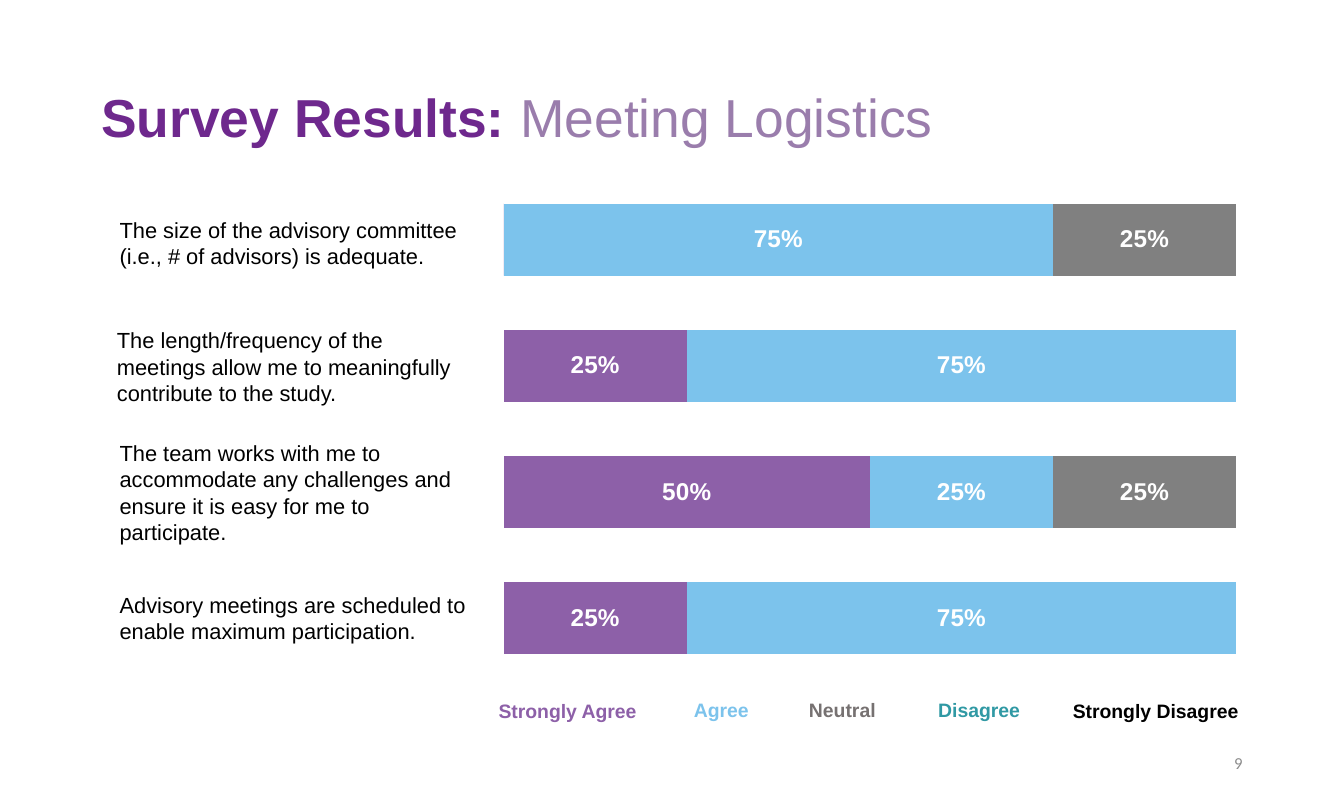
from pptx import Presentation
from pptx.chart.data import CategoryChartData
from pptx.dml.color import RGBColor
from pptx.enum.chart import XL_CHART_TYPE, XL_LABEL_POSITION
from pptx.enum.text import MSO_ANCHOR, MSO_AUTO_SIZE, PP_ALIGN
from pptx.util import Emu, Pt

STACKED = XL_CHART_TYPE.BAR_STACKED
LABEL_CENTER = XL_LABEL_POSITION.CENTER
LEFT, CENTER, RIGHT = PP_ALIGN.LEFT, PP_ALIGN.CENTER, PP_ALIGN.RIGHT
TOP, MIDDLE = MSO_ANCHOR.TOP, MSO_ANCHOR.MIDDLE
GROW, FIXED = MSO_AUTO_SIZE.SHAPE_TO_FIT_TEXT, MSO_AUTO_SIZE.NONE

EMU_PER_PX = 9144  # 100 px to the inch
TITLE_ONLY = 5
COLORS = {
    "title": "6E288D", "subtitle": "9A7DAC", "page_number": "8C8C8C",
    "text": "000000", "white": "FFFFFF",
    "strongly_agree": "8D60A8", "agree": "7CC3EC", "neutral": "808080",
    "neutral_text": "767171", "disagree": "3099A4",
    "gold": "FFC000", "blue": "5B9BD5",
}

# Categories run from the bottom bar to the top bar.
SERIES = [
    ("Series 1", (0.25, 0.5, 0.25, 0), "strongly_agree"),
    ("Series 2", (0.75, 0.25, 0.75, 0.75), "agree"),
    ("Series 3", (0, 0.25, 0, 0.25), "neutral"),
    ("Series 4", (0, 0, 0, 0), "gold"),
    ("Series 5", (0, 0, 0, 0), "blue"),
]
STATEMENTS = [
    (127, 243, 71, "The size of the advisory committee (i.e., # of advisors) is adequate."),
    (124, 369, 101, "The length/frequency of the meetings allow me to meaningfully "
                    "contribute to the study."),
    (127, 498, 131, "The team works with me to accommodate any challenges and "
                    "ensure it is easy for me to participate."),
    (127, 672, 71, "Advisory meetings are scheduled to enable maximum participation."),
]
LEGEND = [
    (559, 795, 181, "Strongly Agree", "strongly_agree"),
    (782, 794, 87, "Agree", "agree"),
    (911, 794, 106, "Neutral", "neutral_text"),
    (1060, 794, 121, "Disagree", "disagree"),
    (1216, 795, 213, "Strongly Disagree", "text"),
]


def px(length):
    return Emu(length * EMU_PER_PX)


def rgb(name):
    return RGBColor.from_string(COLORS[name])


def style_font(font, size, color, bold=False, name="Arial"):
    font.name, font.size, font.bold = name, Pt(size), bold
    font.color.rgb = rgb(color)


def add_span(para, text, **style):
    span = para.add_run()
    span.text = text
    style_font(span.font, **style)


class SurveySlide:
    """Holds the deck, its current page and the font style shared by all text."""

    def __init__(self, width, height):
        self.deck = Presentation()
        self.deck.slide_width, self.deck.slide_height = px(width), px(height)
        self.page = self.deck.slides.add_slide(self.deck.slide_layouts[TITLE_ONLY])

    def title(self, left, top, width, height, spans):
        box = self.page.shapes.title
        box.left, box.top, box.width, box.height = map(px, (left, top, width, height))
        box.text_frame.vertical_anchor = MIDDLE
        para = box.text_frame.paragraphs[0]
        para.alignment, para.line_spacing = LEFT, 0.9
        for text, color, bold in spans:
            add_span(para, text, size=44, color=color, bold=bold)

    def text(self, left, top, width, height, text, align=LEFT, anchor=TOP,
             fit=GROW, **style):
        box = self.page.shapes.add_textbox(*map(px, (left, top, width, height)))
        frame = box.text_frame
        frame.word_wrap, frame.auto_size, frame.vertical_anchor = True, fit, anchor
        para = frame.paragraphs[0]
        para.alignment = align
        add_span(para, text, **style)

    def stacked_bars(self, left, top, width, height, categories, series_rows, labelled):
        """Draw stacked bars with value labels on the first `labelled` series."""
        data = CategoryChartData(number_format="0%")
        data.categories = categories
        for name, values, _ in series_rows:
            data.add_series(name, values)
        frame = self.page.shapes.add_chart(
            STACKED, *map(px, (left, top, width, height)), data)
        chart = frame.chart
        chart.has_legend = chart.has_title = False
        style_font(chart.font, 20, "white", bold=True)
        chart.category_axis.visible = chart.value_axis.visible = False
        chart.value_axis.has_major_gridlines = False
        chart.value_axis.minimum_scale, chart.value_axis.maximum_scale = 0, 1
        plot = chart.plots[0]
        plot.gap_width, plot.overlap, plot.vary_by_categories = 75, 100, False
        for index, (series, row) in enumerate(zip(plot.series, series_rows)):
            series.format.fill.solid()
            series.format.fill.fore_color.rgb = rgb(row[2])
            if index < labelled:
                self.value_labels(series.data_labels)

    def value_labels(self, labels):
        labels.show_value = True
        labels.position = LABEL_CENTER
        labels.number_format = "0%;;"  # zero shows nothing
        labels.number_format_is_linked = False
        style_font(labels.font, 20, "white", bold=True)


def main():
    slide = SurveySlide(1538, 915)
    slide.title(106, 49, 1327, 177, [("Survey Results: ", "title", True),
                                     ("Meeting Logistics", "subtitle", False)])
    slide.text(1086, 848, 346, 49, "9", align=RIGHT, anchor=MIDDLE, fit=FIXED,
               size=13.8, color="page_number", name="Calibri")
    slide.stacked_bars(559, 190, 873, 601, ["1", "2", "3", "4"], SERIES, labelled=3)
    for left, top, height, statement in STATEMENTS:
        slide.text(left, top, 417, height, statement, size=18, color="text")
    for left, top, width, answer, color in LEGEND:
        slide.text(left, top, width, 37, answer, align=CENTER,
                   size=16, color=color, bold=True)
    slide.deck.save("out.pptx")


if __name__ == "__main__":
    main()
